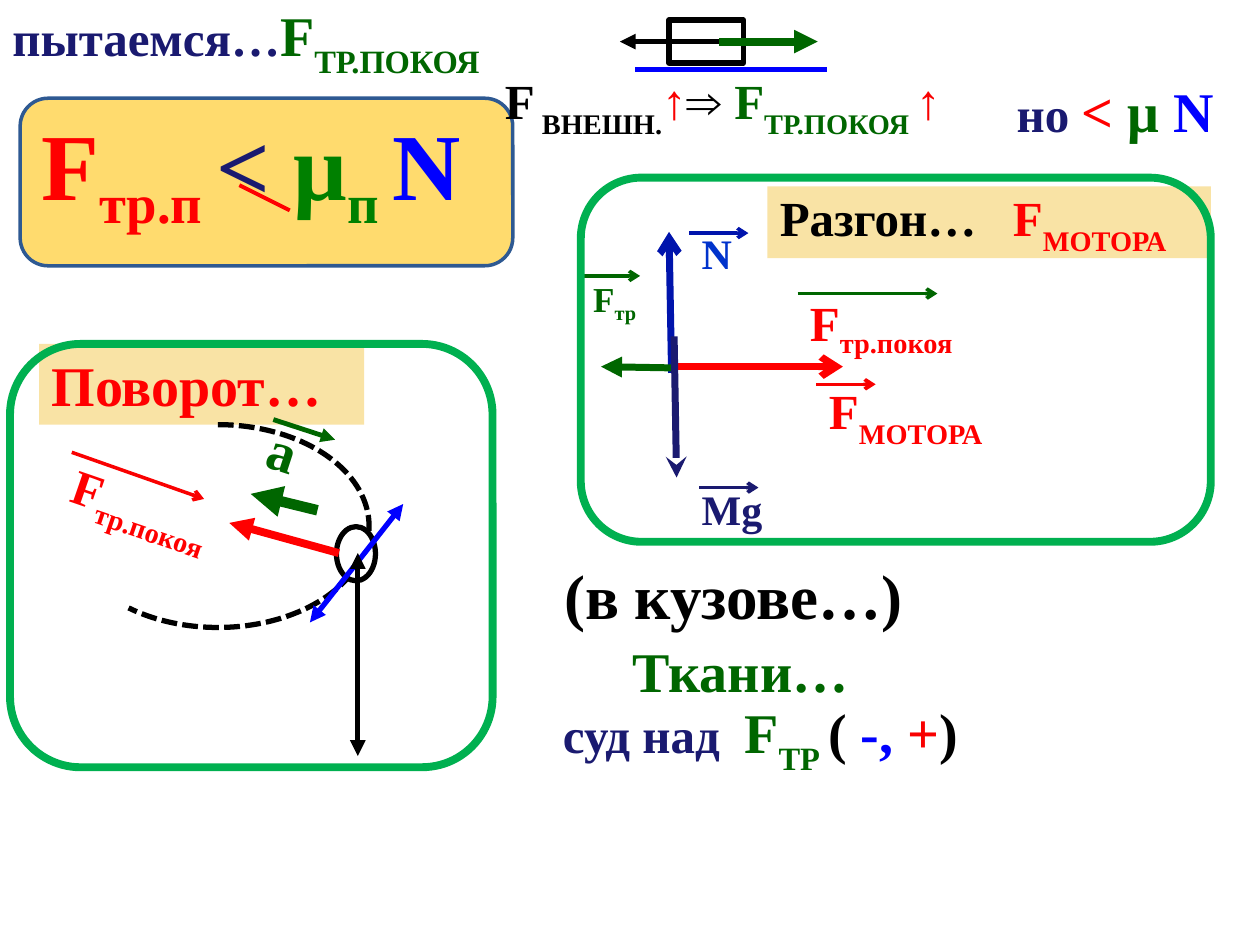
from lxml.etree import SubElement
from pptx import Presentation
from pptx.dml.color import RGBColor
from pptx.enum.dml import MSO_LINE
from pptx.enum.shapes import MSO_CONNECTOR, MSO_SHAPE
from pptx.enum.text import MSO_ANCHOR, MSO_AUTO_SIZE, PP_ALIGN
from pptx.oxml.ns import qn
from pptx.util import Inches, Pt

RED, SCARLET, GREEN, BLUE = "FF0000", "F90101", "006600", "0000FF"
NAVY, ROYAL, BLACK, SAND = "1A1A70", "0014AC", "000000", "F9E3A5"
TOP, MIDDLE = MSO_ANCHOR.TOP, MSO_ANCHOR.MIDDLE


def rgb(code):
    return RGBColor.from_string(code)


class Board:
    """Draws the force diagrams and formulas on one slide in a shared style."""

    font = "Times New Roman"

    def __init__(self, slide):
        self.s = slide

    def shape(self, kind, at, fill=None, line=None, width=1, alpha=None):
        sp = self.s.shapes.add_shape(kind, *map(Inches, at))
        sp.shadow.inherit = False
        if fill:
            sp.fill.solid()
            sp.fill.fore_color.rgb = rgb(fill)
        else:
            sp.fill.background()
        if alpha:
            color = sp._element.spPr.find(qn("a:solidFill")).find(qn("a:srgbClr"))
            SubElement(color, qn("a:alpha"), val=str(alpha * 1000))
        if line:
            sp.line.color.rgb = rgb(line)
            sp.line.width = Pt(width)
        else:
            sp.line.fill.background()
        return sp

    def line(self, start, end, color, width, head=None, tail=None):
        points = map(Inches, (*start, *end))
        cx = self.s.shapes.add_connector(MSO_CONNECTOR.STRAIGHT, *points)
        cx.line.color.rgb = rgb(color)
        cx.line.width = Pt(width)
        ln = cx._element.spPr.find(qn("a:ln"))
        for tag, kind in (("a:headEnd", head), ("a:tailEnd", tail)):
            if kind:
                SubElement(ln, qn(tag), type=kind)
        SubElement(cx._element.spPr, qn("a:effectLst"))

    def text(self, at, size, runs, anchor=TOP, wrap=True, rotation=0, tab=None):
        sp = self.s.shapes.add_textbox(*map(Inches, at))
        sp.rotation = rotation
        self.fill_text(sp, size, runs, anchor, wrap, tab)

    def label(self, at, size, runs, tab=None):
        sp = self.shape(MSO_SHAPE.RECTANGLE, at, SAND)
        self.fill_text(sp, size, runs, MIDDLE, True, tab)

    def fill_text(self, sp, size, runs, anchor, wrap, tab):
        tf = sp.text_frame
        tf.word_wrap = wrap
        tf.auto_size = MSO_AUTO_SIZE.SHAPE_TO_FIT_TEXT
        tf.vertical_anchor = anchor
        p = tf.paragraphs[0]
        p.alignment = PP_ALIGN.LEFT
        if tab:
            tabs = SubElement(p._p.get_or_add_pPr(), qn("a:tabLst"))
            SubElement(tabs, qn("a:tab"), pos=str(Inches(tab)), algn="l")
        p.font.name, p.font.size, p.font.bold = self.font, Pt(size), True
        for content, color, *extra in runs:
            base, own_size = (*extra, 0, 0)[:2]
            r = p.add_run()
            r.text = content
            r.font.color.rgb = rgb(color)
            if base:
                r._r.get_or_add_rPr().set("baseline", str(base * 1000))
            if own_size:
                r.font.size = Pt(own_size)


def draw_formulas(b):
    b.shape(MSO_SHAPE.ROUNDED_RECTANGLE, (0.16, 0.78, 3.91, 1.33), "FFC000", "2E5992", 2, 57)
    b.text((3.91, 0.55, 4.3, 0.57), 28, [
        ("F", BLACK), (" ВНЕШН.", BLACK, -30), ("↑", SCARLET), ("⇒\t", BLACK),
        ("F", GREEN), ("ТР.ПОКОЯ ", GREEN, -30), ("↑", SCARLET)], MIDDLE, tab=1.82)
    b.text((0, 0, 4.3, 0.64), 32, [
        ("пытаемся…", NAVY, 0, 28), ("F", GREEN), ("ТР.ПОКОЯ", GREEN, -30)], MIDDLE)
    b.text((7.97, 0.55, 2.03, 0.64), 32, [
        ("но ", NAVY, 0, 28), ("< ", RED), ("μ ", GREEN), ("N", BLUE)], MIDDLE)
    b.text((0.23, 0.79, 3.87, 1.01), 54, [
        ("F", RED), ("тр.п ", RED, -25), ("< ", NAVY), ("μ", "008000"),
        ("п ", "008000", -25), ("N", BLUE)], wrap=False)
    b.line((1.9, 1.47), (2.3, 1.67), RED, 2.25)


def draw_acceleration(b):
    b.label((6.09, 1.48, 3.52, 0.57), 28, [
        ("Разгон…\t", BLACK), ("F", RED), ("МОТОРА", RED, -30)], tab=1.85)
    b.line((5.36, 2.91), (6.69, 2.91), RED, 4, tail="arrow")
    b.line((5.33, 2.96), (5.31, 1.84), ROYAL, 4, tail="arrow")
    b.line((5.33, 2.92), (4.77, 2.91), GREEN, 4, tail="triangle")
    b.line((5.35, 2.67), (5.37, 3.79), NAVY, 4, tail="stealth")

    b.text((5.47, 3.79, 0.78, 0.5), 24, [("Mg", NAVY)])
    b.text((5.47, 1.76, 0.78, 0.58), 24, [("N", "0033CC")])
    b.text((4.61, 2.15, 0.63, 0.44), 20, [("F", GREEN), ("тр", GREEN, -25)])
    b.text((6.33, 2.27, 1.48, 0.86), 28, [("F", RED), ("тр.покоя", RED, -25)])
    b.text((6.48, 2.97, 1.58, 0.57), 28, [("F", RED), ("МОТОРА", RED, -30)], wrap=False)
    for x, y, length, color in (
            (5.55, 3.87, 0.47, NAVY), (5.47, 1.85, 0.47, ROYAL), (4.61, 2.19, 0.47, GREEN),
            (6.33, 2.33, 1.11, GREEN), (6.48, 3.05, 0.47, SCARLET)):
        b.line((x, y), (x + length, y), color, 2, tail="arrow")


def draw_turn(b):
    b.label((0.31, 2.73, 2.58, 0.64), 32, [("Поворот…", RED)])
    b.line((0.57, 3.59), (1.62, 3.96), SCARLET, 2, tail="arrow")
    b.text((0.41, 3.75, 1.48, 0.86), 28, [("F", RED), ("тр.покоя", RED, -25)], rotation=19)
    track = b.shape(MSO_SHAPE.ARC, (0.53, 3.37, 2.4, 1.61), line=BLACK, width=3)
    track.adjustments[0], track.adjustments[1] = 162, 82.5
    track.line.dash_style = MSO_LINE.SQUARE_DOT
    b.shape(MSO_SHAPE.OVAL, (2.67, 4.18, 0.31, 0.43), "FFFFFF", BLACK, 3)
    b.line((2.69, 4.39), (1.82, 4.15), RED, 4.5, tail="triangle")
    b.line((2.46, 4.94), (3.2, 4), BLUE, 3, "triangle", "triangle")
    b.line((2.52, 4.05), (1.99, 3.92), GREEN, 6, tail="triangle")
    b.line((2.84, 4.39), (2.84, 6), BLACK, 3, "triangle", "triangle")
    b.text((2.04, 3.28, 0.61, 0.64), 32, [("a", GREEN)], rotation=18.1)
    b.line((2.17, 3.33), (2.66, 3.49), GREEN, 2.75, tail="triangle")


def draw_topics(b):
    b.text((4.38, 4.36, 3.36, 0.71), 36, [("(в кузове…)", BLACK)], MIDDLE)
    b.text((4.92, 5, 1.95, 0.64), 32, [("Ткани…", GREEN)], MIDDLE)
    b.text((4.37, 5.53, 3.67, 0.64), 32, [
        ("суд над\t", NAVY, 0, 28), ("F", GREEN), ("ТР ", GREEN, -30), ("(", BLACK),
        (" -, ", BLUE), ("+", SCARLET), (")", BLACK)], MIDDLE, tab=1.44)


def draw_block(b):
    b.shape(MSO_SHAPE.RECTANGLE, (5.31, 0.16, 0.59, 0.34), line=BLACK, width=3)
    b.line((5.71, 0.33), (4.92, 0.33), BLACK, 3, tail="triangle")
    b.line((5.71, 0.33), (6.49, 0.33), GREEN, 4.5, tail="triangle")
    b.line((5.04, 0.55), (6.56, 0.55), BLUE, 3)


def main():
    prs = Presentation()
    prs.slide_width, prs.slide_height = Inches(10), Inches(7.5)
    b = Board(prs.slides.add_slide(prs.slide_layouts[6]))
    for draw in (draw_formulas, draw_acceleration, draw_turn, draw_topics, draw_block):
        draw(b)
    for frame in ((0.08, 2.73, 3.83, 3.36), (4.61, 1.41, 5, 2.89)):
        b.shape(MSO_SHAPE.ROUNDED_RECTANGLE, frame, line="00B050", width=4.5)
    prs.save("out.pptx")


if __name__ == "__main__":
    main()
